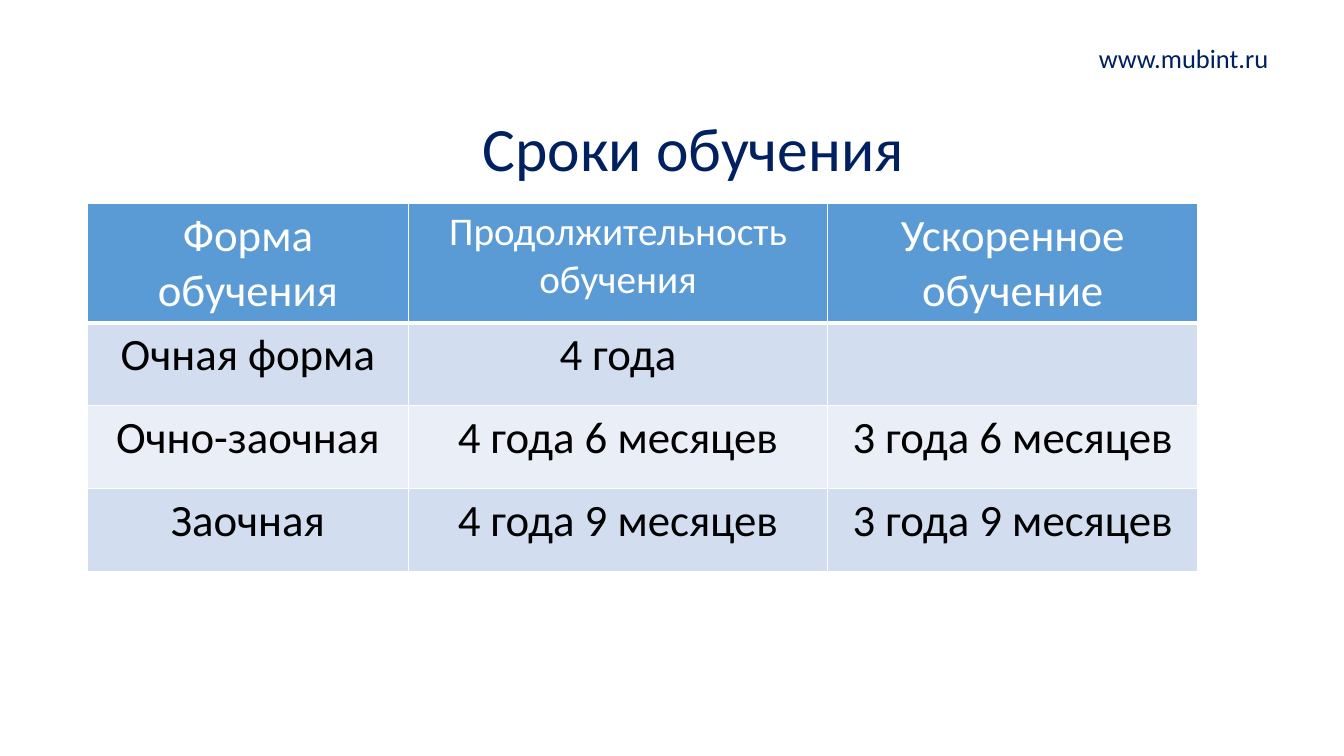
from lxml.etree import SubElement
from pptx import Presentation
from pptx.dml.color import RGBColor
from pptx.enum.text import MSO_ANCHOR as Anchor, PP_ALIGN as Align
from pptx.oxml.ns import qn
from pptx.util import Inches, Pt

COLORS = {
    "navy": "002060",
    "white": "FFFFFF",
    "black": "000000",
    "header": "5B9BD5",
    "band_dark": "D2DEEF",
    "band_light": "EAEFF7",
}


class SlideBuilder:
    font = "Calibri"

    def __init__(self, slide):
        self.slide = slide

    def color(self, name):
        return RGBColor.from_string(COLORS[name])

    def add_text(self, frame, text, size, color, line_spacing=None):
        paragraph = frame.paragraphs[0]
        paragraph.alignment = Align.CENTER
        if line_spacing:
            paragraph.line_spacing = line_spacing
        run = paragraph.add_run()
        run.text = text
        run.font.name = self.font
        run.font.size = Pt(size)
        run.font.color.rgb = self.color(color)

    def title(self, text, box):
        heading = self.slide.shapes.title
        heading.left, heading.top, heading.width, heading.height = map(Inches, box)
        heading.text_frame.vertical_anchor = Anchor.BOTTOM
        self.add_text(heading.text_frame, text, 44, "navy", 0.9)

    def label(self, text, box, size):
        frame = self.slide.shapes.add_textbox(*map(Inches, box)).text_frame
        frame.word_wrap = True
        frame.vertical_anchor = Anchor.BOTTOM
        self.add_text(frame, text, size, "navy", 0.7)

    def borders(self, cell, bottom):
        properties = cell._tc.get_or_add_tcPr()
        for side, width in (("L", 1), ("R", 1), ("T", 1), ("B", bottom)):
            line = SubElement(properties, qn(f"a:ln{side}"), w=str(Pt(width)))
            fill = SubElement(line, qn("a:solidFill"))
            SubElement(fill, qn("a:srgbClr"), val=COLORS["white"])

    def table(self, rows, left, top, widths, heights, header_sizes, body_size):
        box = map(Inches, (left, top, sum(widths), sum(heights)))
        grid = self.slide.shapes.add_table(len(rows), len(widths), *box).table
        for column, width in zip(grid.columns, widths):
            column.width = Inches(width)
        for row_index, (row, height) in enumerate(zip(rows, heights)):
            grid.rows[row_index].height = Inches(height)
            is_header = row_index == 0
            band = "band_dark" if row_index % 2 else "band_light"
            for column_index, text in enumerate(row):
                cell = grid.cell(row_index, column_index)
                self.borders(cell, 3 if is_header else 1)
                cell.fill.solid()
                cell.fill.fore_color.rgb = self.color("header" if is_header else band)
                if text:
                    size = header_sizes[column_index] if is_header else body_size
                    self.add_text(cell.text_frame, text, size, "white" if is_header else "black")


def main():
    deck = Presentation()
    deck.slide_width, deck.slide_height = Inches(13.33), Inches(7.5)
    builder = SlideBuilder(deck.slides.add_slide(deck.slide_layouts[5]))
    builder.title("Сроки обучения", (1.76, 1.14, 10.24, 0.74))
    study_terms = [
        ("Форма обучения", "Продолжительность обучения", "Ускоренное обучение"),
        ("Очная форма", "4 года", ""),
        ("Очно-заочная", "4 года 6 месяцев", "3 года 6 месяцев"),
        ("Заочная", "4 года 9 месяцев", "3 года 9 месяцев"),
    ]
    builder.table(
        study_terms, 0.87, 2.02,
        widths=(3.18, 4.16, 3.67),
        heights=(1.02, 0.82, 0.82, 0.82),
        header_sizes=(32, 28, 32),
        body_size=32,
    )
    builder.label("www.mubint.ru", (10.23, 0.42, 3.02, 0.35), 18.9)
    deck.save("out.pptx")


if __name__ == "__main__":
    main()
